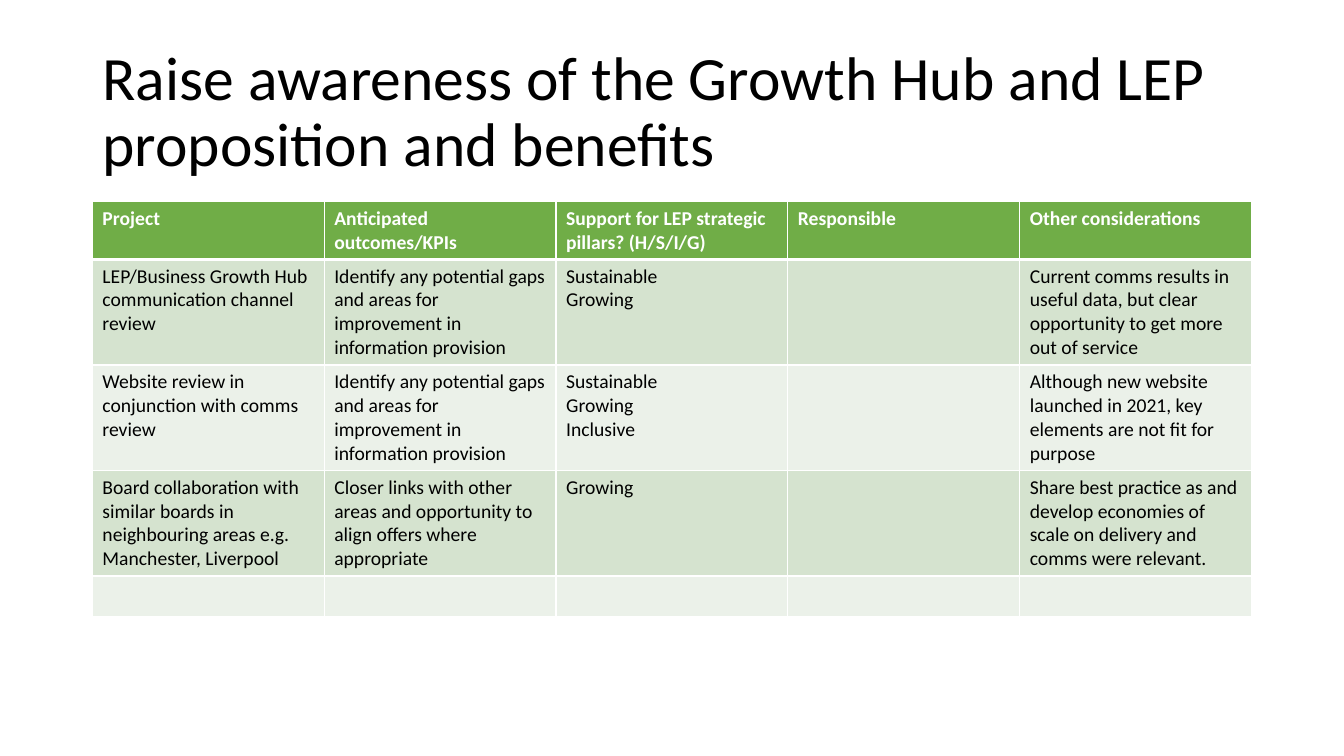
import pptx
import pptx.dml.color
import pptx.enum.text
import pptx.oxml
import pptx.oxml.ns
import pptx.util

Pt = pptx.util.Pt

COLOURS = {
    "text": "000000",
    "header": "70AD47",
    "header text": "FFFFFF",
    "odd row": "D5E3CF",
    "even row": "EBF1E9",
    "border": "FFFFFF",
}
TITLE = "Raise awareness of the Growth Hub and LEP proposition and benefits"
GAPS = "Identify any potential gaps and areas for improvement in information provision"
PROJECTS = [
    ["Project", "Anticipated outcomes/KPIs", "Support for LEP strategic pillars? (H/S/I/G)",
     "Responsible", "Other considerations"],
    ["LEP/Business Growth Hub communication channel review", GAPS, "Sustainable\nGrowing", "",
     "Current comms results in useful data, but clear opportunity to get more out of service"],
    ["Website review in conjunction with comms review", GAPS,
     "Sustainable\nGrowing\nInclusive", "",
     "Although new website launched in 2021, key elements are not fit for purpose"],
    ["Board collaboration with similar boards in neighbouring areas e.g. Manchester, Liverpool",
     "Closer links with other areas and opportunity to align offers where appropriate",
     "Growing", "",
     "Share best practice as and develop economies of scale on delivery and comms were relevant."],
    ["", "", "", "", ""],
]
ROW_HEIGHTS = [40.8, 75.4, 75.4, 75.4, 29.2]


def rgb(name):
    return pptx.dml.color.RGBColor.from_string(COLOURS[name])


def set_all(target, values):
    for name, value in values.items():
        setattr(target, name, value)


class SlideBuilder:
    def __init__(self, slide, font="Calibri"):
        self.slide = slide
        self.font = font

    def format_text(self, frame, size, colour, bold=False):
        for para in frame.paragraphs:
            for span in para.runs:
                set_all(span.font, {"name": self.font, "size": Pt(size), "bold": bold})
                span.font.color.rgb = rgb(colour)

    def title(self, text, left, top, width, height):
        box = self.slide.shapes.title
        set_all(box, {"left": Pt(left), "top": Pt(top), "width": Pt(width), "height": Pt(height)})
        frame = box.text_frame
        frame.text = text
        set_all(frame, {
            "word_wrap": True,
            "auto_size": pptx.enum.text.MSO_AUTO_SIZE.NONE,
            "vertical_anchor": pptx.enum.text.MSO_ANCHOR.MIDDLE,
        })
        set_all(frame.paragraphs[0], {
            "alignment": pptx.enum.text.PP_ALIGN.LEFT,
            "line_spacing": 0.9,
        })
        self.format_text(frame, 44, "text")

    def borders(self, cell, widths):
        """Draw the cell edges; widths maps L, R, T and B, in that order, to points."""
        properties = cell._tc.get_or_add_tcPr()
        for index, (side, width) in enumerate(widths.items()):
            properties.insert(index, pptx.oxml.parse_xml(
                f'<a:ln{side} {pptx.oxml.ns.nsdecls("a")} w="{Pt(width)}"><a:solidFill>'
                f'<a:srgbClr val="{COLOURS["border"]}"/></a:solidFill></a:ln{side}>'))

    def table(self, rows, heights, left, top, width):
        table = self.slide.shapes.add_table(
            len(rows), len(rows[0]), Pt(left), Pt(top), Pt(width), Pt(sum(heights))).table
        for column in table.columns:
            column.width = Pt(width / len(rows[0]))
        for number, texts in enumerate(rows):
            table.rows[number].height = Pt(heights[number])
            header = number == 0
            fill = "header" if header else "odd row" if number % 2 else "even row"
            edges = {"L": 1, "R": 1, "T": 3 if number == 1 else 1, "B": 3 if header else 1}
            for column, text in enumerate(texts):
                cell = table.cell(number, column)
                cell.fill.solid()
                cell.fill.fore_color.rgb = rgb(fill)
                self.borders(cell, edges)
                if text:
                    cell.text_frame.text = text
                    self.format_text(
                        cell.text_frame, 14, "header text" if header else "text", header)


def main():
    deck = pptx.Presentation()
    set_all(deck, {"slide_width": Pt(960), "slide_height": Pt(540)})
    page = SlideBuilder(deck.slides.add_slide(deck.slide_layouts[5]))
    page.title(TITLE, 66, 28.75, 828, 104.4)
    page.table(PROJECTS, ROW_HEIGHTS, 66, 144, 828)
    deck.save("out.pptx")


if __name__ == "__main__":
    main()
